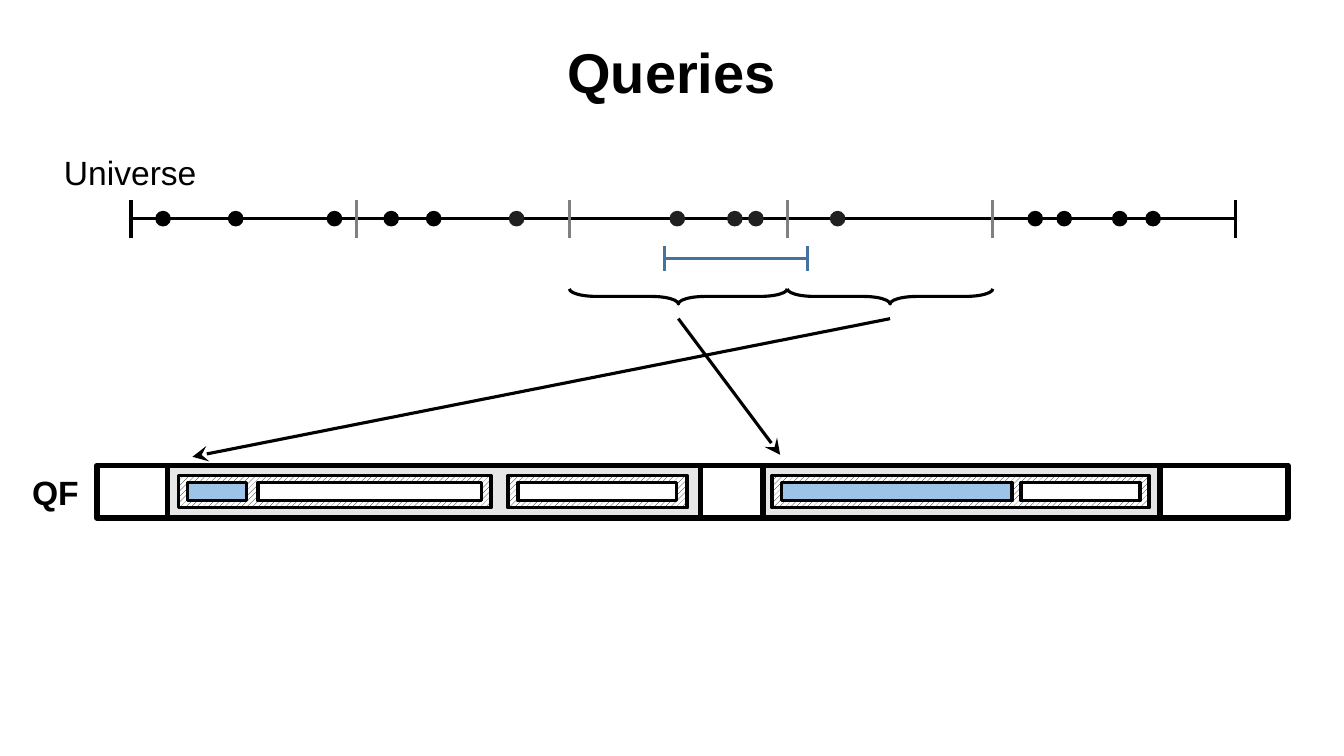
from lxml.etree import SubElement
from pptx import Presentation
from pptx.dml.color import RGBColor
from pptx.enum.dml import MSO_PATTERN
from pptx.enum.shapes import MSO_CONNECTOR, MSO_SHAPE
from pptx.enum.text import MSO_ANCHOR, PP_ALIGN
from pptx.oxml.ns import qn
from pptx.util import Cm, Pt

BLACK = RGBColor(0x00, 0x00, 0x00)
WHITE = RGBColor(0xFF, 0xFF, 0xFF)
CHARCOAL = RGBColor(0x20, 0x20, 0x20)
GREY = RGBColor(0x80, 0x80, 0x80)
LIGHT_GREY = RGBColor(0xE7, 0xE6, 0xE6)
BLUE = RGBColor(0x43, 0x73, 0x9E)
LIGHT_BLUE = RGBColor(0x9D, 0xC3, 0xE6)

BOUNDARIES = [5.69, 11.05, 16.54, 21.72]
OUTER_KEYS = [0.81, 2.64, 5.13, 6.56, 7.63, 22.79, 23.52, 24.92, 25.76]
INNER_KEYS = [9.72, 13.77, 15.22, 15.75, 17.81]
CLUSTERS = [(1.78, 13.44), (16.79, 10.01)]
RUNS = [(2.06, 7.87), (10.36, 4.52), (17.02, 9.5)]
SLOTS = [(2.28, 1.5, LIGHT_BLUE), (4.06, 5.64, WHITE), (10.62, 3.99, WHITE),
         (17.25, 5.82, LIGHT_BLUE), (23.29, 3, WHITE)]


def add_label(slide, text, left, top, width, height, size, bold=False, wrap=True):
    """Add a one-line text box, centred when it wraps."""
    tf = slide.shapes.add_textbox(Cm(left), Cm(top), Cm(width), Cm(height)).text_frame
    tf.word_wrap = wrap
    tf.vertical_anchor = MSO_ANCHOR.TOP
    p = tf.paragraphs[0]
    p.text = text
    p.alignment = PP_ALIGN.CENTER if wrap else PP_ALIGN.LEFT
    font = p.runs[0].font
    font.name, font.size, font.bold = "Arial", Pt(size), bold
    font.color.rgb = BLACK


def add_line(slide, x1, y1, x2, y2, color=BLACK, weight=2.25, arrow=False):
    """Add a straight line, with a stealth head at its end if asked."""
    line = slide.shapes.add_connector(
        MSO_CONNECTOR.STRAIGHT, Cm(x1), Cm(y1), Cm(x2), Cm(y2))
    line.line.color.rgb = color
    line.line.width = Pt(weight)
    if arrow:
        SubElement(line.line._get_or_add_ln(), qn("a:tailEnd"),
                   type="stealth", w="lg", len="lg")
    SubElement(line._element.spPr, qn("a:effectLst"))


def add_figure(slide, kind, left, top, width, height, fill=None, line=BLACK, weight=2.5):
    """Add an outlined preset shape, unfilled when no fill is given."""
    sp = slide.shapes.add_shape(kind, Cm(left), Cm(top), Cm(width), Cm(height))
    sp.shadow.inherit = False
    if fill is None:
        sp.fill.background()
    else:
        sp.fill.solid()
        sp.fill.fore_color.rgb = fill
    sp.line.color.rgb = line
    sp.line.width = Pt(weight)
    return sp


def add_range(slide, left, top, width, height, color, weight=2.25):
    """Add a horizontal line with an upright tick at each end."""
    middle = top + height / 2
    add_line(slide, left, middle, left + width, middle, color, weight)
    for x in (left, left + width):
        add_line(slide, x, top, x, top + height, color)


def add_universe(slide, left, top, width, height, dot=0.36):
    """Draw the number line with its boundaries and keys."""
    add_label(slide, "Universe", left - 2.61, top - 1.32, 5.18, 1.27, 24)
    add_range(slide, left, top, width, height, BLACK, 2.5)
    for x in BOUNDARIES:
        add_line(slide, left + x, top, left + x, top + height, GREY)
    for keys, color in ((OUTER_KEYS, BLACK), (INNER_KEYS, CHARCOAL)):
        for x in keys:
            add_figure(slide, MSO_SHAPE.OVAL, left + x - dot / 2,
                       top + (height - dot) / 2, dot, dot, color, color, 1)


def add_brace(slide, left, top, width, height):
    """Draw a brace that points down from the given box."""
    sp = add_figure(slide, MSO_SHAPE.RIGHT_BRACE, left + (width - height) / 2,
                    top + (height - width) / 2, height, width, weight=2.25)
    sp.rotation = 90
    sp.adjustments[0], sp.adjustments[1] = 1.8, 0.5


def add_mapping(slide, left, top, height, targets):
    """Draw a brace under each queried interval and an arrow to its target."""
    for start, end, (x, y) in zip(BOUNDARIES[1:], BOUNDARIES[2:], targets):
        add_brace(slide, left + start, top, end - start, height)
        add_line(slide, left + (start + end) / 2, top + 0.75, x, y, arrow=True)


def add_filter(slide, left, top, width, height, run_height=0.81, slot_height=0.46):
    """Draw the QF bar with its clusters, runs and slots."""
    add_label(slide, "QF", left - 1.88, top + 0.03, 1.68, 1.27, 24, True, False)
    for x, w in CLUSTERS:
        add_figure(slide, MSO_SHAPE.RECTANGLE, left + x, top, w, height, LIGHT_GREY, weight=4)
    for x, w in RUNS:
        sp = add_figure(slide, MSO_SHAPE.RECTANGLE, left + x,
                        top + (height - run_height) / 2, w, run_height)
        sp.fill.patterned()
        sp.fill.pattern = MSO_PATTERN.WIDE_UPWARD_DIAGONAL
        sp.fill.fore_color.rgb = BLACK
        sp.fill.back_color.rgb = WHITE
    for x, w, color in SLOTS:
        add_figure(slide, MSO_SHAPE.RECTANGLE, left + x,
                   top + (height - slot_height) / 2, w, slot_height, color)
    add_figure(slide, MSO_SHAPE.RECTANGLE, left, top, width, height, weight=4)


def main():
    """Build the slide and save it."""
    prs = Presentation()
    prs.slide_width, prs.slide_height = Cm(33.87), Cm(19.05)
    slide = prs.slides.add_slide(prs.slide_layouts[6])
    add_label(slide, "Queries", 1.8, 0.81, 30.25, 1.96, 40, True)
    add_universe(slide, 3.3, 5.03, 27.84, 0.96)
    add_range(slide, 16.74, 6.2, 3.61, 0.63, BLUE)
    add_filter(slide, 2.44, 11.73, 30.02, 1.32)
    add_mapping(slide, 3.3, 7.28, 0.38, [(19.66, 11.46), (4.85, 11.51)])
    prs.save("out.pptx")


if __name__ == "__main__":
    main()
